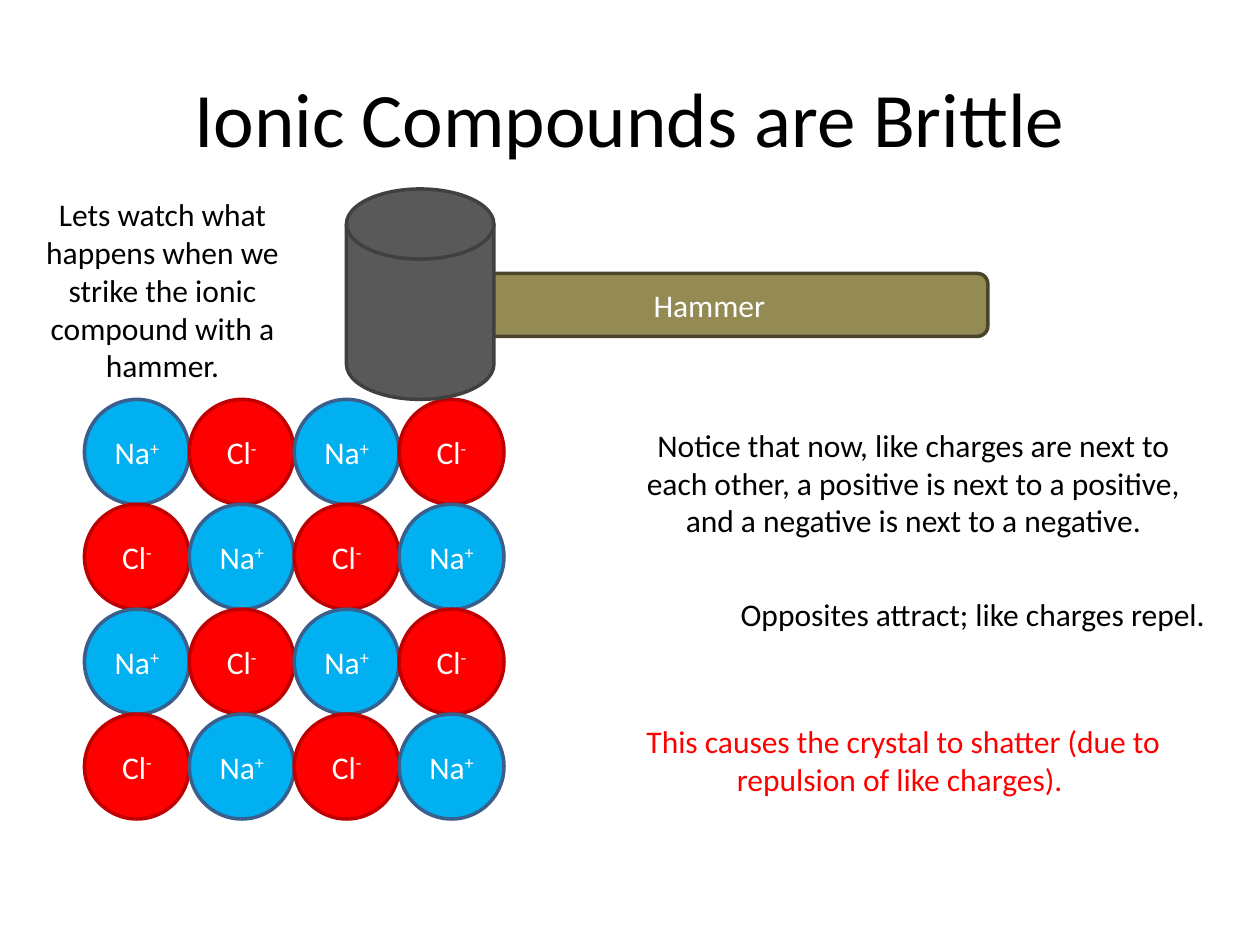
import pptx
import pptx.dml.color
import pptx.enum.shapes
import pptx.enum.text
import pptx.util
from pptx.util import Inches

COLORS = {
    "black": "000000", "white": "FFFFFF", "red": "FF0000",
    "sodium": "00B0F0", "sodium_line": "3A5F8C",
    "chloride": "FF0000", "chloride_line": "C00000",
    "handle": "948A54", "handle_line": "4A452A",
    "head": "595959", "head_line": "404040",
}
IONS = [("sodium", "Na", "+"), ("chloride", "Cl", "-")]
SHAPES = pptx.enum.shapes.MSO_SHAPE
ANCHORS = pptx.enum.text.MSO_ANCHOR


def rgb(name):
    """Return the named colour."""
    return pptx.dml.color.RGBColor.from_string(COLORS[name])


def write(shape, text, color, size=18, anchor=ANCHORS.MIDDLE, superscript=""):
    """Write one centred paragraph, with an optional superscript, into a shape."""
    frame = shape.text_frame
    frame.word_wrap = True
    frame.vertical_anchor = anchor
    frame.text = text
    paragraph = frame.paragraphs[0]
    paragraph.alignment = pptx.enum.text.PP_ALIGN.CENTER
    if superscript:
        raised = paragraph.add_run()
        raised.text = superscript
        raised.font._element.set("baseline", "30000")
    for run in paragraph.runs:
        run.font.name = "Calibri"
        run.font.size = pptx.util.Pt(size)
        run.font.color.rgb = rgb(color)


def add_solid(shapes, preset, left, top, width, height, color):
    """Add a filled and outlined preset shape."""
    shape = shapes.add_shape(preset, Inches(left), Inches(top), Inches(width), Inches(height))
    shape.shadow.inherit = False
    shape.fill.solid()
    shape.fill.fore_color.rgb = rgb(color)
    shape.line.color.rgb = rgb(color + "_line")
    shape.line.width = pptx.util.Pt(2)
    return shape


def add_text(slide, left, top, width, height, text, color="black", size=18, anchor=ANCHORS.TOP):
    """Add a centred text box."""
    box = slide.shapes.add_textbox(Inches(left), Inches(top), Inches(width), Inches(height))
    write(box, text, color, size, anchor)


def add_crystal(slide, left, top, side, count=4):
    """Fill a square with a lattice of alternating ions."""
    diameter = side / count
    for row in range(count):
        for column in range(count):
            color, symbol, charge = IONS[(row + column) % 2]
            ion = add_solid(slide.shapes, SHAPES.OVAL, left + column * diameter,
                            top + row * diameter, diameter, diameter, color)
            ion.text_frame.margin_left = ion.text_frame.margin_right = 0
            write(ion, symbol, "white", superscript=charge)


def add_hammer(slide, left, top, width, height):
    """Group a handle and a head within the given box."""
    shapes = slide.shapes.add_group_shape().shapes
    handle_left, handle_height = 0.67, 0.5
    handle = add_solid(shapes, SHAPES.ROUNDED_RECTANGLE, left + handle_left, top + 0.67,
                       width - handle_left, handle_height, "handle")
    write(handle, "Hammer", "white")
    add_solid(shapes, SHAPES.FLOWCHART_MAGNETIC_DISK, left, top, 1.17, height, "head")


def add_explanations(slide, left, top, width):
    """Place the three explanations down the right-hand column."""
    add_text(slide, left + 0.08, top, width, 1.01,
             "Notice that now, like charges are next to each other, "
             "a positive is next to a positive, and a negative is next to a negative.")
    add_text(slide, left + 0.58, top + 1.34, width, 0.4,
             "Opposites attract; like charges repel. ")
    add_text(slide, left, top + 2.35, width, 0.71,
             "This causes the crystal to shatter (due to repulsion of like charges). ", "red")


def main():
    """Build and save the slide."""
    presentation = pptx.Presentation()
    presentation.slide_width = Inches(10)
    presentation.slide_height = Inches(7.5)
    slide = presentation.slides.add_slide(presentation.slide_layouts[6])
    add_text(slide, 0.5, 0.3, 9, 1.25, "Ionic Compounds are Brittle", size=44,
             anchor=ANCHORS.MIDDLE)
    add_crystal(slide, 0.67, 3.17, 3.33)
    add_hammer(slide, 2.75, 1.5, 5.09, 1.67)
    add_text(slide, 0.25, 1.5, 2.08, 1.62,
             "Lets watch what happens when we strike the ionic compound with a hammer.")
    add_explanations(slide, 4.92, 3.33, 4.5)
    presentation.save("out.pptx")


if __name__ == "__main__":
    main()
